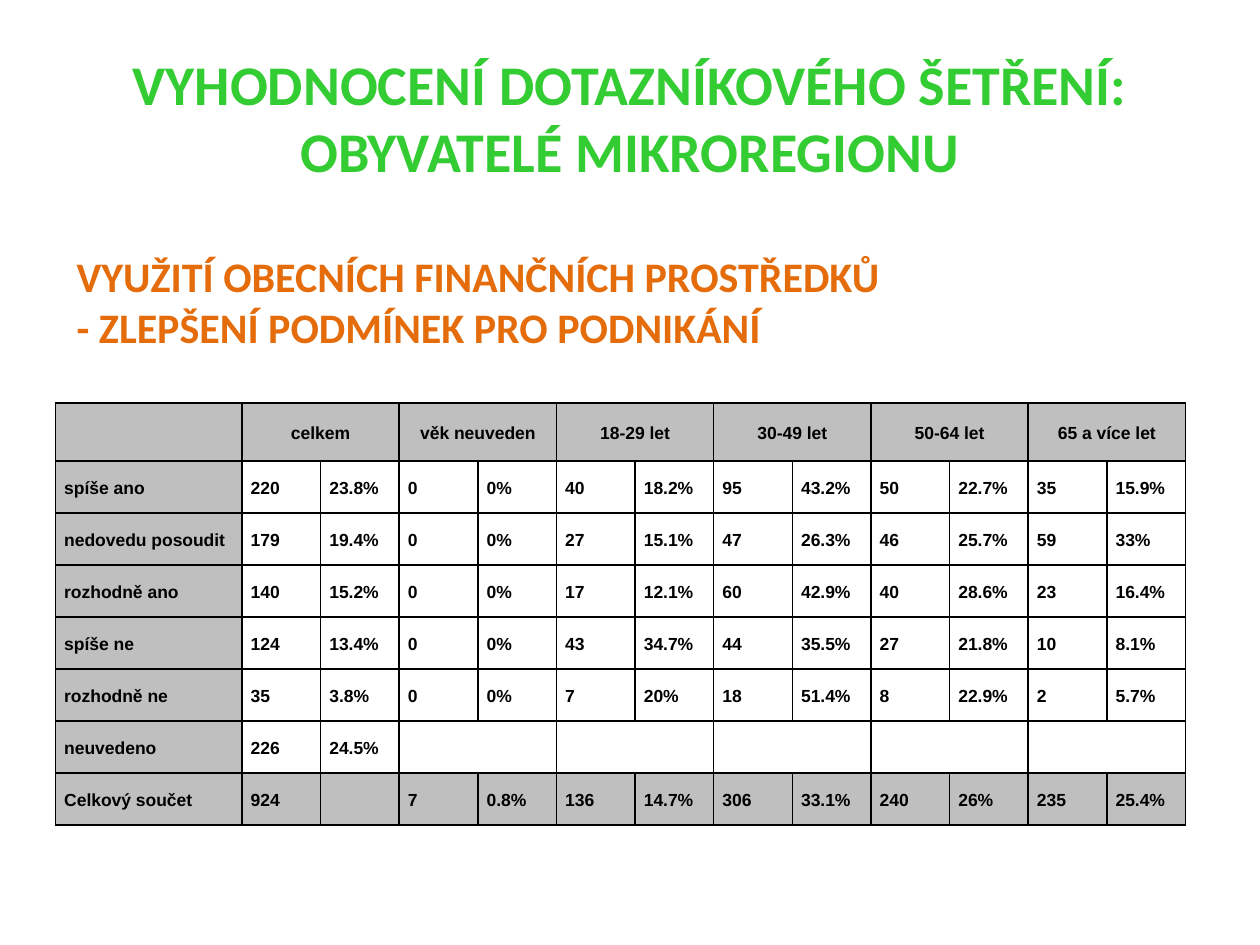
from lxml.etree import SubElement
from pptx import Presentation
from pptx.dml.color import RGBColor as Color
from pptx.enum.text import MSO_ANCHOR as Anchor, PP_ALIGN as Align
from pptx.oxml.ns import qn
from pptx.util import Inches, Pt

COLORS = {"title": "33CC33", "subtitle": "E46C0A", "ink": "000000", "band": "BFBFBF"}
GROUPS = ["celkem", "věk neuveden", "18-29 let", "30-49 let", "50-64 let", "65 a více let"]
ANSWERS = [
    ("spíše ano", "220 23.8% 0 0% 40 18.2% 95 43.2% 50 22.7% 35 15.9%"),
    ("nedovedu posoudit", "179 19.4% 0 0% 27 15.1% 47 26.3% 46 25.7% 59 33%"),
    ("rozhodně ano", "140 15.2% 0 0% 17 12.1% 60 42.9% 40 28.6% 23 16.4%"),
    ("spíše ne", "124 13.4% 0 0% 43 34.7% 44 35.5% 27 21.8% 10 8.1%"),
    ("rozhodně ne", "35 3.8% 0 0% 7 20% 18 51.4% 8 22.9% 2 5.7%"),
    ("neuvedeno", "226 24.5%"),
    ("Celkový součet", "924 - 7 0.8% 136 14.7% 306 33.1% 240 26% 235 25.4%"),
]


def set_font(para, name, size, color):
    para.font.name = name
    para.font.size = Pt(size)
    para.font.bold = True
    para.font.color.rgb = Color.from_string(COLORS[color])


def add_borders(cell):
    properties = cell._tc.get_or_add_tcPr()
    for side in ("lnL", "lnR", "lnT", "lnB"):
        line = SubElement(properties, qn(f"a:{side}"), w=str(Pt(1)))
        fill = SubElement(line, qn("a:solidFill"))
        SubElement(fill, qn("a:srgbClr"), val=COLORS["ink"])


deck = Presentation()
deck.slide_width, deck.slide_height = Inches(10), Inches(7.5)
page = deck.slides.add_slide(deck.slide_layouts[6])

headings = [
    ("title", 32, Align.CENTER, Anchor.MIDDLE, (0.5, 0.3, 9, 1.25),
     ["VYHODNOCENÍ DOTAZNÍKOVÉHO ŠETŘENÍ:\vOBYVATELÉ MIKROREGIONU"]),
    ("subtitle", 24, Align.LEFT, Anchor.TOP, (0.51, 1.94, 8.9, 0.91),
     ["VYUŽITÍ OBECNÍCH FINANČNÍCH PROSTŘEDKŮ", "- ZLEPŠENÍ PODMÍNEK PRO PODNIKÁNÍ"]),
]
for role, size, align, anchor, place, lines in headings:
    box = page.shapes.add_textbox(*map(Inches, place))
    frame = box.text_frame
    frame.word_wrap = True
    frame.vertical_anchor = anchor
    for index, line in enumerate(lines):
        para = frame.add_paragraph() if index else frame.paragraphs[0]
        para.text = line
        para.alignment = align
        set_font(para, "Calibri", size, role)

width, height, label_width, header_height = 8.97, 3.35, 1.48, 0.46
row_count, column_count = len(ANSWERS) + 1, 2 * len(GROUPS) + 1
table = page.shapes.add_table(row_count, column_count, Inches(0.44), Inches(3.2),
                              Inches(width), Inches(height)).table
table.horz_banding = False
table.first_row = False
for index, column in enumerate(table.columns):
    column.width = Inches((width - label_width) / (column_count - 1) if index else label_width)
for index, row in enumerate(table.rows):
    row.height = Inches((height - header_height) / (row_count - 1) if index else header_height)

total_row = row_count - 1
unstated_row = total_row - 1
for row, first in ((0, 1), (unstated_row, 3)):
    for column in range(first, column_count, 2):
        table.cell(row, column).merge(table.cell(row, column + 1))

texts = {(0, 2 * index + 1): group for index, group in enumerate(GROUPS)}
for row, (label, values) in enumerate(ANSWERS, 1):
    for column, value in enumerate([label, *values.split()]):
        if value != "-":
            texts[row, column] = value

for row in range(row_count):
    for column in range(column_count):
        cell = table.cell(row, column)
        add_borders(cell)
        if row in (0, total_row) or column == 0:
            cell.fill.solid()
            cell.fill.fore_color.rgb = Color.from_string(COLORS["band"])
        else:
            cell.fill.background()
        if (row, column) not in texts:
            continue
        cell.vertical_anchor = Anchor.MIDDLE
        cell.margin_left = cell.margin_right = Inches(0.07)
        cell.margin_top = cell.margin_bottom = 0
        para = cell.text_frame.paragraphs[0]
        para.text = texts[row, column]
        para.alignment = Align.LEFT if row else Align.CENTER
        para.line_spacing = 1.15
        set_font(para, "Arial", 10, "ink")

deck.save("out.pptx")
